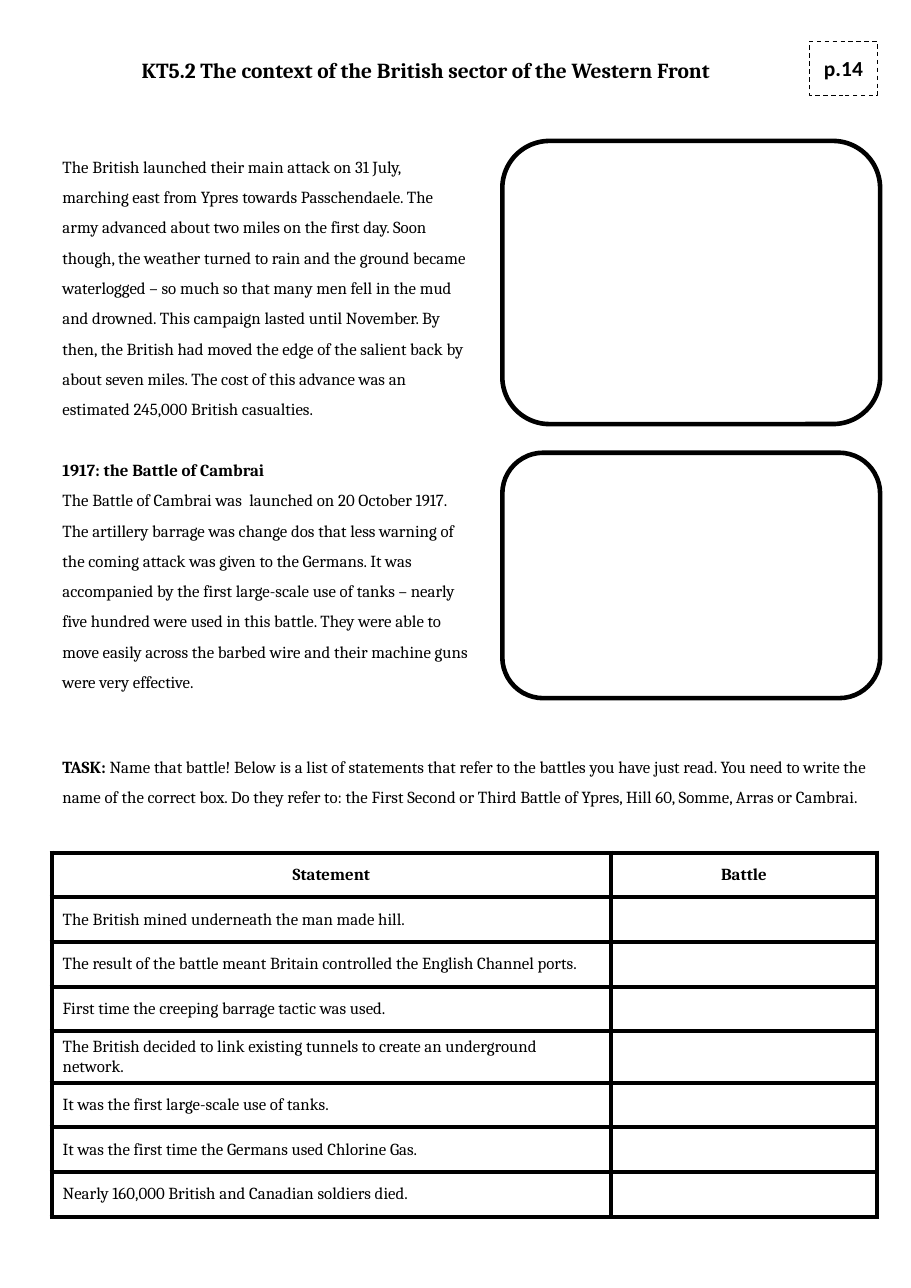
from lxml import etree
from pptx import Presentation
from pptx.dml.color import RGBColor
from pptx.enum.dml import MSO_LINE
from pptx.enum.shapes import MSO_SHAPE
from pptx.enum.text import MSO_ANCHOR, PP_ALIGN
from pptx.oxml import parse_xml
from pptx.util import Cm, Pt

BLACK = RGBColor(0, 0, 0)
WHITE = RGBColor(255, 255, 255)
CENTER = PP_ALIGN.CENTER
LEFT = PP_ALIGN.LEFT
MIDDLE = MSO_ANCHOR.MIDDLE
DASH = MSO_LINE.DASH
RECTANGLE = MSO_SHAPE.RECTANGLE
ROUNDED = MSO_SHAPE.ROUNDED_RECTANGLE
NS = "http://schemas.openxmlformats.org/drawingml/2006/main"
MARGIN = Cm(1.19)

ADVANCE = (
    "The British launched their main attack on 31 July, marching east from Ypres "
    "towards Passchendaele. The army advanced about two miles on the first day. "
    "Soon though, the weather turned to rain and the ground became waterlogged – "
    "so much so that many men fell in the mud and drowned. This campaign lasted "
    "until November. By then, the British had moved the edge of the salient back "
    "by about seven miles. The cost of this advance was an estimated 245,000 "
    "British casualties."
)
CAMBRAI = (
    "The Battle of Cambrai was  launched on 20 October 1917. The artillery barrage "
    "was change dos that less warning of the coming attack was given to the "
    "Germans. It was accompanied by the first large-scale use of tanks – nearly "
    "five hundred were used in this battle. They were able to move easily across "
    "the barbed wire and their machine guns were very effective."
)
TASK = (
    "Name that battle! Below is a list of statements that refer to the battles you "
    "have just read. You need to write the name of the correct box. Do they refer "
    "to: the First Second or Third Battle of Ypres, Hill 60, Somme, Arras or Cambrai."
)
STATEMENTS = [
    "The British mined underneath the man made hill.",
    "The result of the battle meant Britain controlled the English Channel ports.",
    "First time the creeping barrage tactic was used.",
    "The British decided to link existing tunnels to create an underground network.",
    "It was the first large-scale use of tanks.",
    "It was the first time the Germans used Chlorine Gas.",
    "Nearly 160,000 British and Canadian soldiers died.",
]


def style(paragraph, size=11, bold=False, align=LEFT, name="Cambria"):
    paragraph.alignment = align
    paragraph.font.name = name
    paragraph.font.size = Pt(size)
    paragraph.font.bold = bold
    paragraph.font.color.rgb = BLACK


def add_frame(kind, left, top, width, height, weight):
    frame = slide.shapes.add_shape(kind, left, top, width, height)
    frame.shadow.inherit = False
    frame.fill.solid()
    frame.fill.fore_color.rgb = WHITE
    frame.line.color.rgb = BLACK
    frame.line.width = Pt(weight)
    return frame


prs = Presentation()
prs.slide_width = Cm(21)
prs.slide_height = Cm(29.7)
slide = prs.slides.add_slide(prs.slide_layouts[6])

page_number = add_frame(RECTANGLE, Cm(18.67), Cm(0.95), Cm(1.55), Cm(1.25), 0.75)
page_number.line.dash_style = DASH
page_number.text_frame.vertical_anchor = MIDDLE
page_number.text_frame.text = "p.14"
style(page_number.text_frame.paragraphs[0], 14, True, CENTER, "Calibri")

heading = slide.shapes.add_textbox(MARGIN, Cm(1.07), Cm(17.27), Cm(1.25)).text_frame
heading.word_wrap = True
heading.margin_top = heading.margin_bottom = Cm(0.25)
heading.text = "KT5.2 The context of the British sector of the Western Front"
style(heading.paragraphs[0], 14, True, CENTER)

reading = slide.shapes.add_textbox(MARGIN, Cm(3.25), Cm(9.91), Cm(12.88)).text_frame
reading.word_wrap = True
reading.text = "\n".join([ADVANCE, "1917: the Battle of Cambrai", CAMBRAI])
for paragraph, bold in zip(reading.paragraphs, (False, True, False)):
    style(paragraph, bold=bold)
    paragraph.line_spacing = 1.5
reading.paragraphs[1].space_before = Pt(19.8)

for top, height in ((3.25, 6.53), (10.44, 5.66)):
    add_frame(ROUNDED, Cm(11.58), Cm(top), Cm(8.71), Cm(height), 3)

task = slide.shapes.add_textbox(MARGIN, Cm(17.09), Cm(19.13), Cm(2.29)).text_frame
task.word_wrap = True
instruction = task.paragraphs[0]
style(instruction)
instruction.line_spacing = 1.5
label = instruction.add_run()
label.text = "TASK: "
label.font.bold = True
instruction.add_run().text = TASK

rows = [("Statement", "Battle")] + [(statement, "") for statement in STATEMENTS]
row_height = Cm(1.03)
battles = slide.shapes.add_table(
    len(rows), 2, MARGIN, Cm(19.66), Cm(19.02), row_height * len(rows)
).table
battles.columns[0].width = Cm(12.9)
battles.columns[1].width = Cm(6.12)
for r, row in enumerate(rows):
    battles.rows[r].height = row_height
    for c, text in enumerate(row):
        cell = battles.cell(r, c)
        cell.text = text
        cell.vertical_anchor = MIDDLE
        cell.fill.solid()
        cell.fill.fore_color.rgb = WHITE
        style(cell.text_frame.paragraphs[0], bold=r == 0, align=LEFT if r else CENTER)
        properties = cell._tc.get_or_add_tcPr()
        for position, side in enumerate("LRTB"):
            border = parse_xml(f'<a:ln{side} xmlns:a="{NS}" w="{Pt(3)}"/>')
            line_fill = etree.SubElement(border, f"{{{NS}}}solidFill")
            etree.SubElement(line_fill, f"{{{NS}}}srgbClr", val=str(BLACK))
            properties.insert(position, border)

prs.save("out.pptx")
